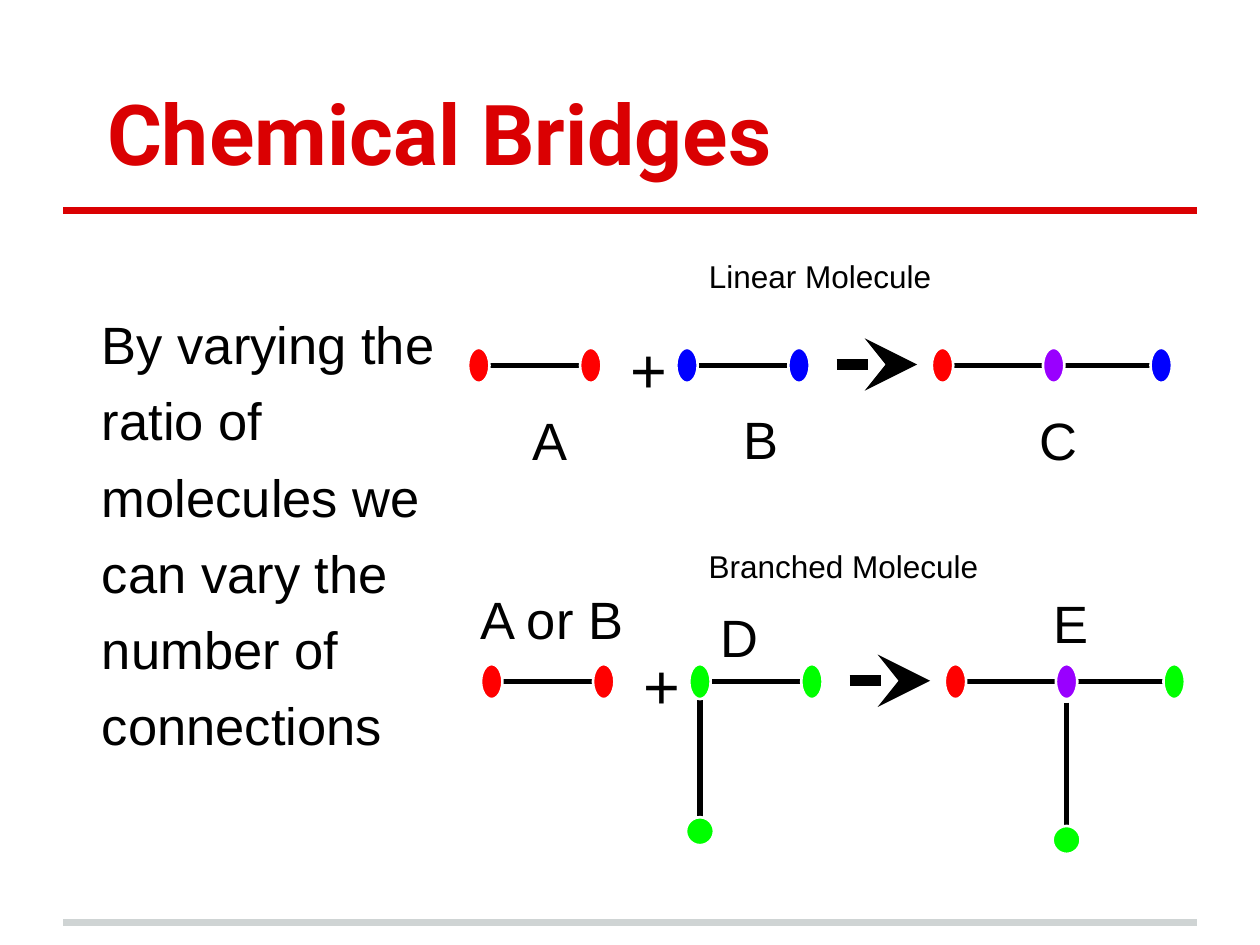
from lxml import etree
from pptx import Presentation
from pptx.dml.color import RGBColor
from pptx.enum.shapes import MSO_CONNECTOR, MSO_SHAPE
from pptx.enum.text import MSO_ANCHOR, PP_ALIGN
from pptx.oxml.ns import qn
from pptx.util import Pt

STRAIGHT = MSO_CONNECTOR.STRAIGHT
OVAL = MSO_SHAPE.OVAL
TOP, MIDDLE, BOTTOM = MSO_ANCHOR.TOP, MSO_ANCHOR.MIDDLE, MSO_ANCHOR.BOTTOM
LEFT, CENTER = PP_ALIGN.LEFT, PP_ALIGN.CENTER

COLORS = {
    "title": "DA0002", "footer": "CFD4D4", "black": "000000", "white": "FFFFFF",
    "red": "FF0000", "blue": "0000FF", "green": "00FF00", "purple": "9900FF",
}
ATOM_CENTERS = (0, 64, 119, 183, 265, 328.5, 390)
BONDS = ((0, 1), (2, 3), (4, 5), (5, 6))
BOND_INSET = 3


def color(name):
    """Return the named colour."""
    return RGBColor.from_string(COLORS[name])


def add_text(slide, box, lines, size, font="Arial", ink="black", bold=False,
             anchor=TOP, align=LEFT, margins=(0, 0, 0, 0), gap=0):
    """Write one paragraph per line in a box of left, top, width, height."""
    frame = slide.shapes.add_textbox(*map(Pt, box)).text_frame
    frame.word_wrap = True
    frame.vertical_anchor = anchor
    (frame.margin_left, frame.margin_top,
     frame.margin_right, frame.margin_bottom) = map(Pt, margins)
    for index, line in enumerate(lines):
        paragraph = frame.add_paragraph() if index else frame.paragraphs[0]
        paragraph.alignment = align
        paragraph.space_before = Pt(gap if index else 0)
        run = paragraph.add_run()
        run.text = line
        run.font.name = font
        run.font.size = Pt(size)
        run.font.bold = bold
        run.font.color.rgb = color(ink)


def add_line(slide, start, end, width=3, ink="black", arrow=False):
    """Draw a straight line, with a stealth head at its end if asked."""
    line = slide.shapes.add_connector(STRAIGHT, *map(Pt, (*start, *end)))
    line.line.color.rgb = color(ink)
    line.line.width = Pt(width)
    properties = line._element.spPr
    if arrow:
        etree.SubElement(properties.find(qn("a:ln")), qn("a:tailEnd"),
                         type="stealth", w="lg", len="lg")
    etree.SubElement(properties, qn("a:effectLst"))


def add_atom(slide, x, y, fill, width=12.25, height=20):
    """Draw an atom centred on a point."""
    atom = slide.shapes.add_shape(
        OVAL, Pt(x - width / 2), Pt(y - height / 2), Pt(width), Pt(height))
    atom.shadow.inherit = False
    atom.fill.solid()
    atom.fill.fore_color.rgb = color(fill)
    atom.line.color.rgb = color("white")
    atom.line.width = Pt(1.5)


def add_header(slide, left, top, width, height):
    """Place the title above its red rule."""
    add_text(slide, (left, top, width, height), ["Chemical Bridges"], 48, "Roboto",
             "title", True, BOTTOM, margins=(25.2, 7.2, 7.2, 7.2))
    rule = top + height + 8.5
    add_line(slide, (left, rule), (left + width, rule), 4, "title")


def add_body(slide, left, top, width, height):
    """Place the explanation at the left."""
    lines = ["By varying the", "ratio of", "molecules we",
             "can vary the", "number of", "connections"]
    add_text(slide, (left, top, width, height), lines, 30,
             margins=(22.3, 52.5, 7.2, 7.2), gap=7.5)


def add_reaction(slide, left, middle, fills, caption, labels, branches=()):
    """Draw a reaction whose first atom is centred on the given point."""
    caption_text, caption_left, caption_top = caption
    add_text(slide, (left + caption_left, middle + caption_top, 174, 22),
             [caption_text], 18)
    for first, last in BONDS:
        add_line(slide, (left + ATOM_CENTERS[first] + BOND_INSET, middle),
                 (left + ATOM_CENTERS[last] - BOND_INSET, middle))
    for index, start, end in branches:
        x = left + ATOM_CENTERS[index]
        add_line(slide, (x, middle + start), (x, middle + end))
        add_atom(slide, x, middle + end, "green", 16, 16)
    for x, fill in zip(ATOM_CENTERS, fills):
        add_atom(slide, left + x, middle, fill)
    add_text(slide, (left + 82, middle - 19, 30, 41), ["+"], 36,
             anchor=MIDDLE, align=CENTER)
    add_line(slide, (left + 204.5, middle - 0.5), (left + 250.5, middle - 0.5),
             6, arrow=True)
    for text, x, y, width in labels:
        add_text(slide, (left + x, middle + y, width, 35), [text], 30)


def main():
    """Build and save the slide."""
    presentation = Presentation()
    presentation.slide_width, presentation.slide_height = Pt(720), Pt(540)
    slide = presentation.slides.add_slide(presentation.slide_layouts[6])
    add_line(slide, (36, 527), (684, 527), 4, "footer")
    add_header(slide, 36, 21.6, 648, 90)
    add_body(slide, 36, 126, 648, 391)
    add_reaction(
        slide, 273.6, 208.8,
        ("red", "red", "blue", "blue", "red", "purple", "blue"),
        ("Linear Molecule", 131.5, -61.7),
        (("A", 30.5, 24.5, 24), ("B", 151, 23.5, 24), ("C", 320.5, 24.5, 24)))
    add_reaction(
        slide, 281, 389.5,
        ("red", "red", "green", "green", "red", "purple", "green"),
        ("Branched Molecule", 124, -76.7),
        (("A or B", -6.5, -54, 100), ("D", 130.5, -43.5, 24), ("E", 321, -51.5, 24)),
        ((2, 8, 85.5), (5, 12, 90.5)))
    presentation.save("out.pptx")


if __name__ == "__main__":
    main()
